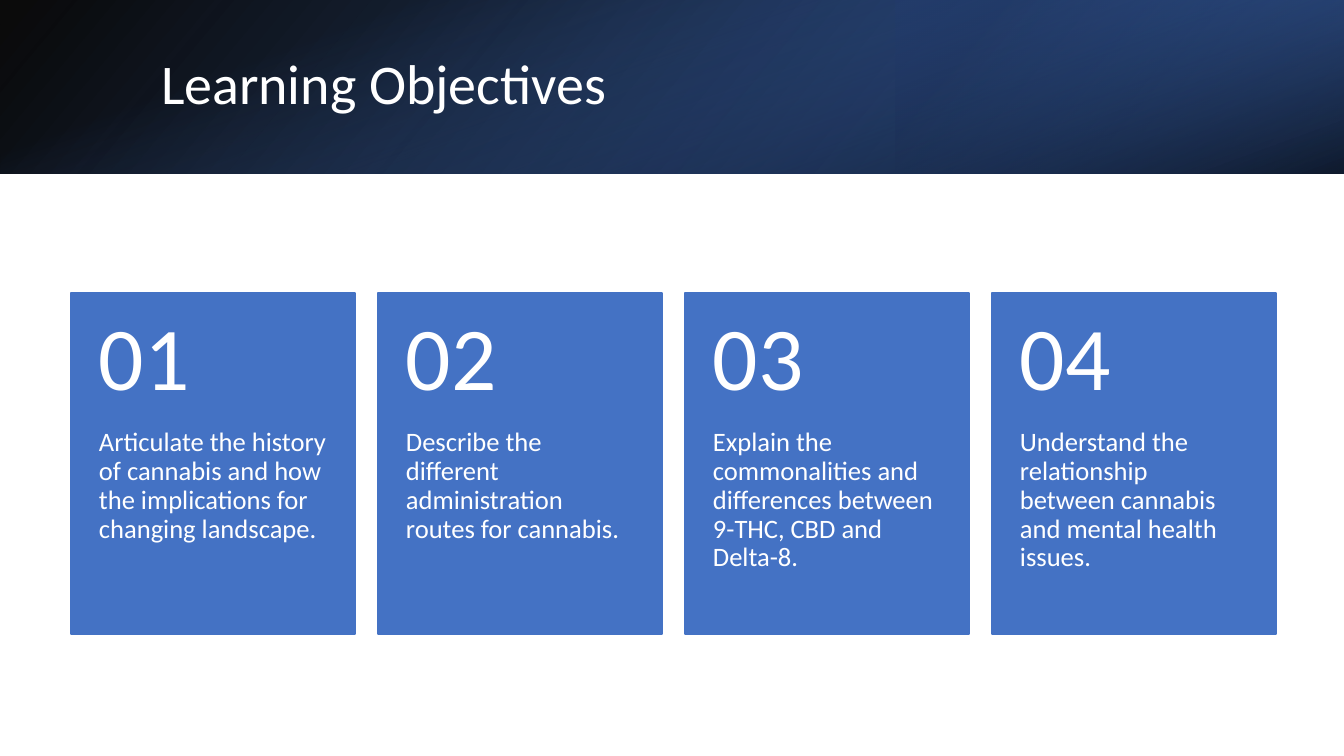
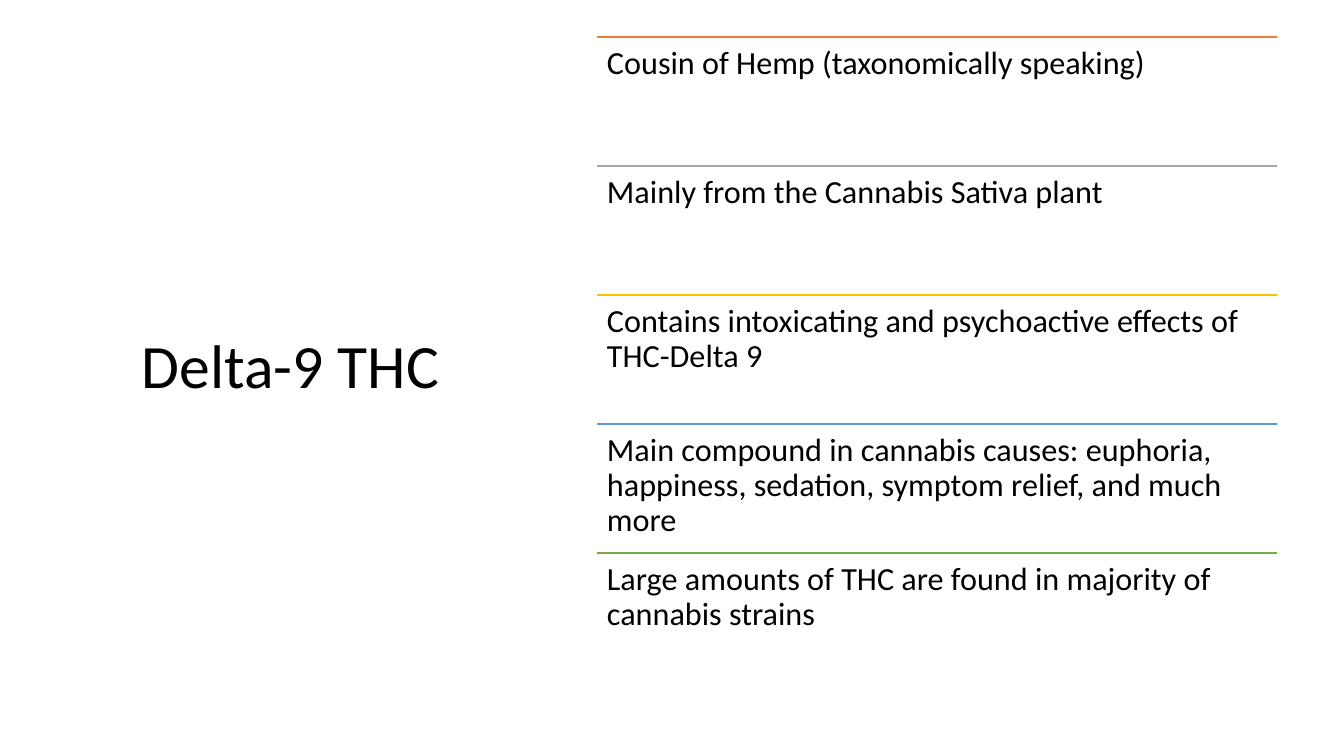
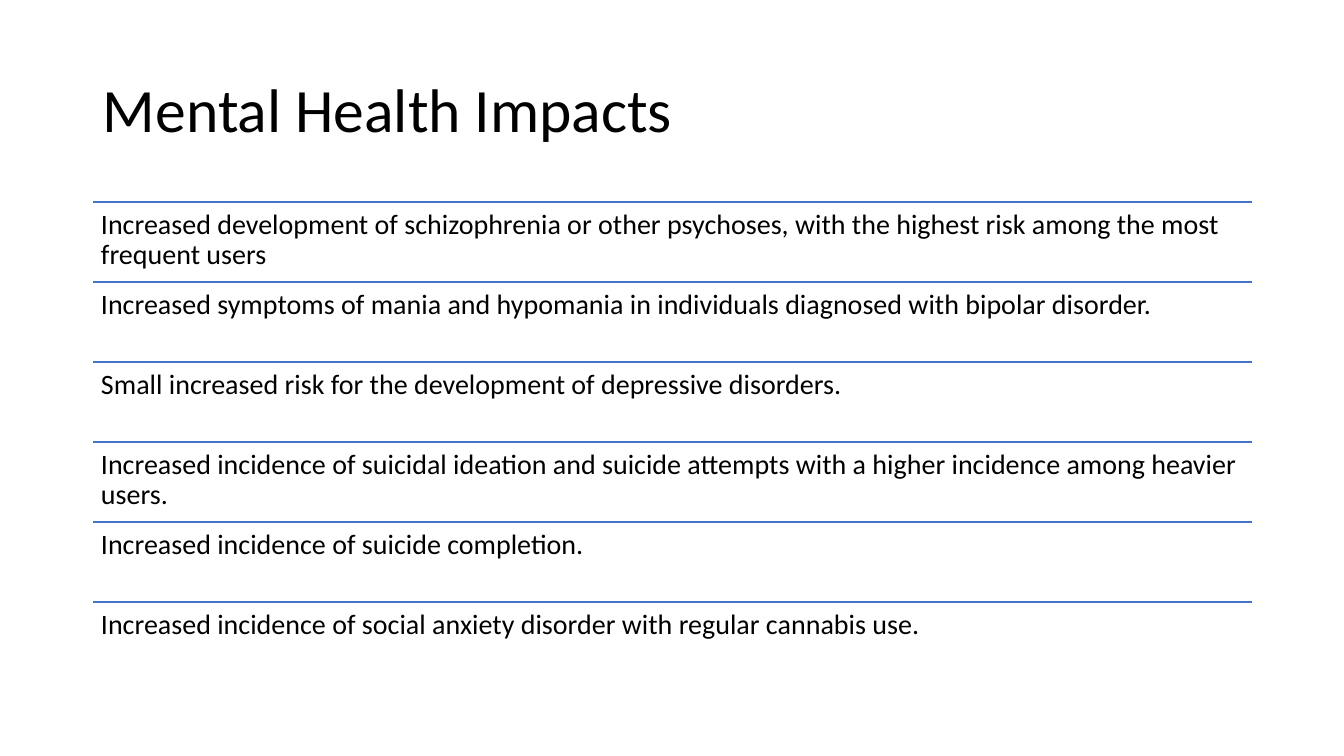
from lxml.etree import SubElement
from pptx import Presentation
from pptx.dml.color import RGBColor
from pptx.enum.shapes import MSO_CONNECTOR, MSO_SHAPE
from pptx.enum.text import MSO_ANCHOR, MSO_AUTO_SIZE, PP_ALIGN
from pptx.oxml.ns import qn
from pptx.util import Emu, Pt

SCALE = 914400 / 100.8
WIDE, HIGH = 1344, 756
FONT = "Calibri"
BLACK, WHITE, BLUE = "000000", "FFFFFF", "4472C4"
HUES = ["ED7D31", "A5A5A5", "FFC000", "5B9BD5", "70AD47"]

GOALS = [
    "Articulate the history of cannabis and how the implications for changing landscape.",
    "Describe the different administration routes for cannabis.",
    "Explain the commonalities and differences between 9-THC, CBD and Delta-8.",
    "Understand the relationship between cannabis and mental health issues.",
]
FACTS = [
    "Cousin of Hemp (taxonomically speaking)",
    "Mainly from the Cannabis Sativa plant",
    "Contains intoxicating and psychoactive effects of THC-Delta 9",
    "Main compound in cannabis causes: euphoria, happiness, sedation, symptom relief, and much more",
    "Large amounts of THC are found in majority of cannabis strains",
]
RISKS = [
    "Increased development of schizophrenia or other psychoses, with the highest risk among the most frequent users",
    "Increased symptoms of mania and hypomania in individuals diagnosed with bipolar disorder.",
    "Small increased risk for the development of depressive disorders.",
    "Increased incidence of suicidal ideation and suicide attempts with a higher incidence among heavier users.",
    "Increased incidence of suicide completion.",
    "Increased incidence of social anxiety disorder with regular cannabis use.",
]


def px(*sizes):
    """Turn px lengths into EMU."""
    return [Emu(round(size * SCALE)) for size in sizes]


def rgb(code):
    """Turn a hex string into a colour."""
    return RGBColor.from_string(code)


def write(shape, text, size, color, pads, anchor=MSO_ANCHOR.TOP):
    """Set one left-aligned paragraph in a shape."""
    frame = shape.text_frame
    frame.text = text
    frame.word_wrap = True
    frame.auto_size = MSO_AUTO_SIZE.NONE
    frame.vertical_anchor = anchor
    (frame.margin_left, frame.margin_top,
     frame.margin_right, frame.margin_bottom) = px(*pads)
    para = frame.paragraphs[0]
    para.alignment = PP_ALIGN.LEFT
    para.line_spacing = 0.9
    para.font.name = FONT
    para.font.size = Pt(size)
    para.font.color.rgb = rgb(color)


def label(slide, box, *style):
    """Add a text box."""
    write(slide.shapes.add_textbox(*px(*box)), *style)


def title(slide, box, text, size=44, color=BLACK):
    """Place and style the title."""
    head = slide.shapes.title
    head.left, head.top, head.width, head.height = px(*box)
    write(head, text, size, color, (10, 5, 10, 5), MSO_ANCHOR.MIDDLE)


def block(slide, box):
    """Add a plain box without shadow."""
    shape = slide.shapes.add_shape(MSO_SHAPE.RECTANGLE, *px(*box))
    shape.shadow.inherit = False
    return shape


def blend(slide, box, stops, angle, turn=0, flip=False):
    """Add a box with a see-through gradient, its angle clockwise."""
    shape = block(slide, box)
    shape.rotation = turn
    shape.line.fill.background()
    if flip:
        shape._element.spPr.find(qn("a:xfrm")).set("flipH", "1")
    shape.fill.gradient()
    shape.fill.gradient_angle = 360 - angle
    for stop, (place, color, _) in zip(shape.fill.gradient_stops, stops):
        stop.position = place / 100
        stop.color.rgb = rgb(color)
    tints = shape._element.spPr.find(qn("a:gradFill")).iter(qn("a:srgbClr"))
    for tint, (_, _, alpha) in zip(list(tints), stops):
        SubElement(tint, qn("a:alpha")).set("val", str(alpha * 1000))


def band(slide, x, y, w, h):
    """Layer the three gradients of the top band."""
    third = w // 3
    blend(slide, (x, y, w, h),
          [(0, BLACK, 96), (100, "2F5597", 100)], 140, flip=True)
    blend(slide, (x + w - third, y, third, h),
          [(19, "203864", 68), (100, BLUE, 79)], 320, 180, True)
    shift = (w - h) // 2
    blend(slide, (x + shift, y - shift, h, w),
          [(23, BLUE, 0), (99, BLACK, 74)], 340, 90)


def cards(slide, x, y, w, h, texts, gap=23):
    """Fill a box with equal numbered cards."""
    wide = (w - gap * (len(texts) - 1)) // len(texts)
    top = h * 2 // 5
    for i, text in enumerate(texts):
        left = x + i * (wide + gap)
        card = block(slide, (left, y, wide, h))
        card.fill.solid()
        card.fill.fore_color.rgb = rgb(BLUE)
        card.line.color.rgb = rgb(BLUE)
        card.line.width = Pt(1)
        label(slide, (left, y + top, wide, h - top),
              text, 19, WHITE, (28, 0, 28, 36))
        label(slide, (left, y, wide, top), f"{i + 1:02}", 64, WHITE,
              (28, 18, 28, 18), MSO_ANCHOR.MIDDLE)


def rows(slide, x, y, w, h, texts, hues, size, pad):
    """Fill a box with equal rows, each under a line."""
    step = h // len(texts)
    for i, (text, hue) in enumerate(zip(texts, hues)):
        top = y + i * step
        rule = slide.shapes.add_connector(
            MSO_CONNECTOR.STRAIGHT, *px(x, top, x + w, top))
        rule.line.color.rgb = rgb(hue)
        rule.line.width = Pt(1)
        SubElement(rule._element.spPr, qn("a:effectLst"))
        label(slide, (x, top, w, step), text, size, BLACK, [pad] * 4)


def main():
    """Build the deck."""
    deck = Presentation()
    deck.slide_width, deck.slide_height = px(WIDE, HIGH)
    goals, facts, risks = (
        deck.slides.add_slide(deck.slide_layouts[5]) for _ in range(3))

    band(goals, 0, 0, WIDE, 174)
    tree = goals.shapes._spTree
    tree.append(goals.shapes.title._element)
    title(goals, (151, 38, 1107, 97), "Learning Objectives", 40, WHITE)
    cards(goals, 71, 293, 1205, 341, GOALS)

    title(facts, (132, 61, 438, 615), "Delta-9 THC")
    rows(facts, 597, 37, 680, 645, FACTS, HUES, 23, 10)

    title(risks, (93, 40, 1159, 146), "Mental Health Impacts")
    rows(risks, 93, 202, 1159, 480, RISKS, [BLUE] * len(RISKS), 20, 8)

    deck.save("out.pptx")


if __name__ == "__main__":
    main()
